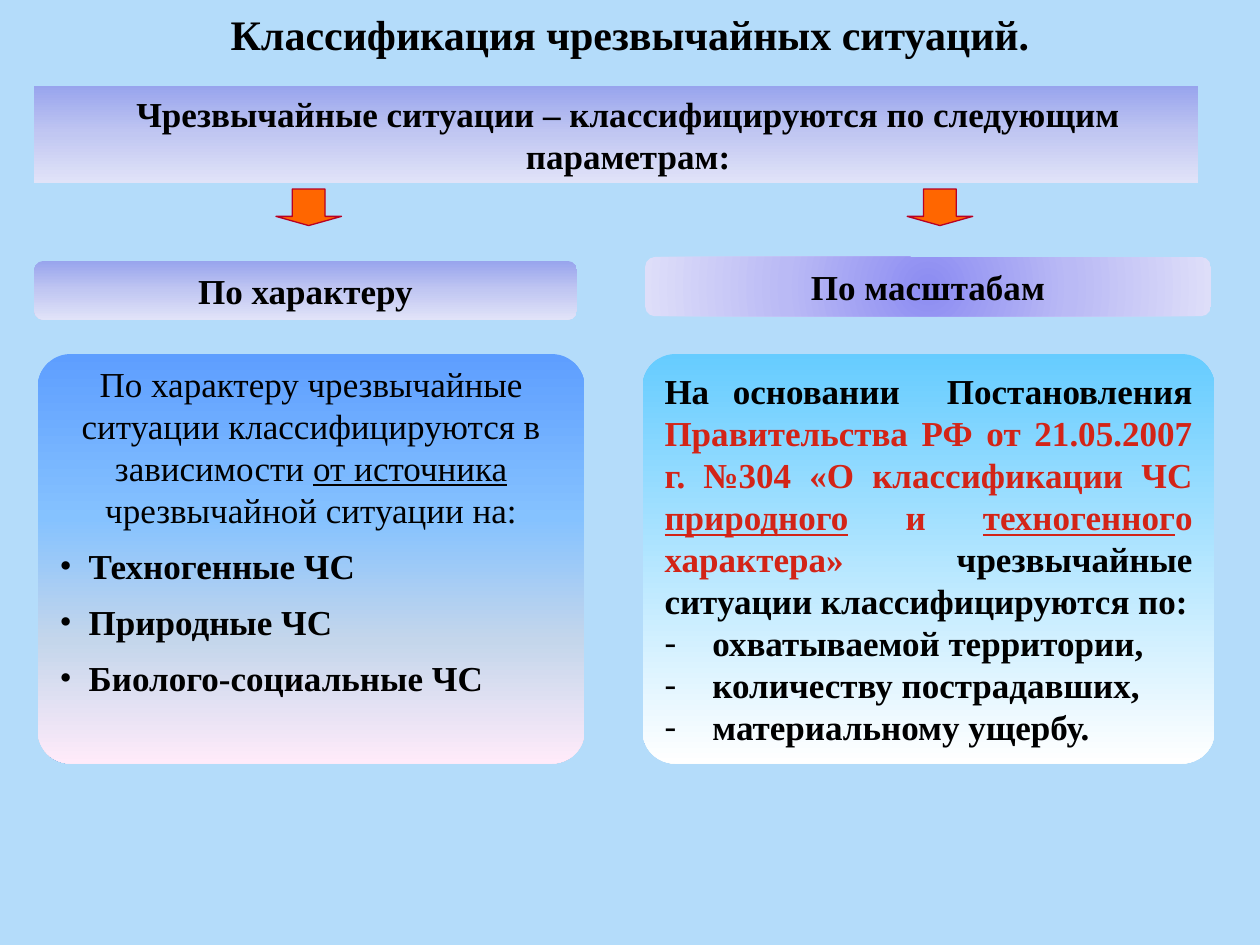
from dataclasses import dataclass

import pptx
import pptx.dml.color
import pptx.enum.shapes
import pptx.enum.text
import pptx.oxml
import pptx.oxml.ns
import pptx.util
from lxml import etree

Inches = pptx.util.Inches
MSO = pptx.enum.shapes.MSO_SHAPE
ALIGN = pptx.enum.text.PP_ALIGN
qn = pptx.oxml.ns.qn


@dataclass(frozen=True)
class Theme:
    """Colours, gradients and type sizes of the slide."""
    font: str = "Times New Roman"
    title: int = 24
    body: int = 20
    gap: int = 8
    text: str = "000000"
    accent: str = "D32417"
    background: str = "B4DCFA"
    arrow: str = "FF6600"
    arrow_line: str = "B80023"
    lavender: tuple = ((0, "98A4ED"), (50, "C1C7F2"), (100, "E1E3F8"))
    violet: tuple = ((0, "8C8CF2"), (50, "BABAF5"), (100, "DEDEF9"))
    sky: tuple = ((0, "66CCFF"), (100, "FFFFFF"))
    dusk: tuple = ((0, "5E9EFF"), (40, "85C2FF"), (70, "C4D6EB"), (100, "FFEBFA"))


T = Theme()


def rgb(value):
    """Return a colour from its hex code."""
    return pptx.dml.color.RGBColor.from_string(value)


def add_run(p, text, size=T.body, color=T.text, bold=True, underline=False):
    """Add a formatted run to a paragraph."""
    r = p.add_run()
    r.text = text
    f = r.font
    f.name, f.size, f.bold = T.font, pptx.util.Pt(size), bold
    f.underline = underline
    f.color.rgb = rgb(color)


def add_paragraph(tf, runs, align, before=0, bullet=None, indent=0):
    """Add a paragraph of (text, format) runs, using the first one if it is free."""
    p = tf.paragraphs[0]
    if p.runs:
        p = tf.add_paragraph()
    p.alignment = align
    p.space_before = pptx.util.Pt(before)
    if bullet:
        pPr = p._p.get_or_add_pPr()
        pPr.set("marL", str(Inches(indent)))
        pPr.set("indent", str(-Inches(indent)))
        etree.SubElement(pPr, qn("a:buFont"), typeface=T.font)
        etree.SubElement(pPr, qn("a:buChar"), char=bullet)
    for text, style in runs:
        add_run(p, text, **style)
    return p


def fill_gradient(sp, stops, radial=False):
    """Fill a shape with a downward or radial gradient."""
    sp.fill.gradient()
    grad = sp._element.spPr.find(qn("a:gradFill"))
    for child in list(grad):
        grad.remove(child)
    gs_list = etree.SubElement(grad, qn("a:gsLst"))
    for pos, color in stops:
        gs = etree.SubElement(gs_list, qn("a:gs"), pos=str(pos * 1000))
        etree.SubElement(gs, qn("a:srgbClr"), val=color)
    if radial:
        shade = etree.SubElement(grad, qn("a:path"), path="circle")
        etree.SubElement(shade, qn("a:fillToRect"), l="50000", t="50000", r="50000", b="50000")
    else:
        etree.SubElement(grad, qn("a:lin"), ang="5400000", scaled="0")


def add_box(s, box, kind, stops, radius=None, radial=False):
    """Add a borderless gradient box and return its text frame."""
    sp = s.shapes.add_shape(kind, *map(Inches, box))
    sp.shadow.inherit = False
    sp.line.fill.background()
    fill_gradient(sp, stops, radial)
    if radius is not None:
        sp.adjustments[0] = radius
    tf = sp.text_frame
    tf.word_wrap = True
    tf.vertical_anchor = pptx.enum.text.MSO_ANCHOR.MIDDLE
    return tf


def add_title(s, box, text):
    """Place the slide title."""
    sp = s.shapes.title
    sp.left, sp.top, sp.width, sp.height = map(Inches, box)
    add_paragraph(sp.text_frame, [(text, {"size": T.title})], ALIGN.CENTER)


def add_banner(s, box, text):
    """Place the banner above both columns."""
    tf = add_box(s, box, MSO.RECTANGLE, T.lavender)
    p = add_paragraph(tf, [(text, {})], ALIGN.CENTER)
    p._p.get_or_add_pPr().set("marL", str(Inches(0.19)))


def add_arrow(s, box):
    """Place an arrow from the banner to a column."""
    sp = s.shapes.add_shape(MSO.DOWN_ARROW, *map(Inches, box))
    sp.shadow.inherit = False
    sp.adjustments[0], sp.adjustments[1] = 0.5, 0.25
    sp.fill.solid()
    sp.fill.fore_color.rgb = rgb(T.arrow)
    sp.line.color.rgb = rgb(T.arrow_line)
    sp.line.width = pptx.util.Pt(0.75)


def add_heading(s, box, text, stops, radial=False):
    """Place a column heading."""
    tf = add_box(s, box, MSO.ROUNDED_RECTANGLE, stops, 0.167, radial)
    add_paragraph(tf, [(text, {})], ALIGN.CENTER)


def add_nature_panel(s, box):
    """Place the panel on classification by nature."""
    tf = add_box(s, box, MSO.ROUNDED_RECTANGLE, T.dusk, 0.08)
    tf.margin_bottom = Inches(0.5)
    plain = {"bold": False}
    intro = [
        ("По характеру чрезвычайные ситуации классифицируются в зависимости ", plain),
        ("от источника ", {"bold": False, "underline": True}),
        ("чрезвычайной ситуации на:", plain),
    ]
    add_paragraph(tf, intro, ALIGN.CENTER, T.gap)
    for item in ("Техногенные ЧС", "Природные ЧС", "Биолого-социальные ЧС"):
        add_paragraph(tf, [(item, {})], ALIGN.LEFT, T.gap, "•", 0.23)


def add_scale_panel(s, box):
    """Place the panel on classification by scale."""
    tf = add_box(s, box, MSO.ROUNDED_RECTANGLE, T.sky, 0.08)
    red = {"color": T.accent}
    marked = {"color": T.accent, "underline": True}
    intro = [
        ("На основании  Постановления ", {}),
        ("Правительства РФ от 21.05.2007 г. №304 «О классификации ЧС ", red),
        ("природного", marked),
        (" и ", red),
        ("техногенног", marked),
        ("о характера»", red),
        (" чрезвычайные ситуации классифицируются по:", {}),
    ]
    add_paragraph(tf, intro, ALIGN.JUSTIFY)
    for item in ("охватываемой территории,", "количеству пострадавших,", "материальному ущербу."):
        add_paragraph(tf, [(item, {})], ALIGN.JUSTIFY, 0, "-", 0.38)


def main():
    """Build the slide and save it."""
    prs = pptx.Presentation()
    prs.slide_width, prs.slide_height = Inches(10), Inches(7.5)
    s = prs.slides.add_slide(prs.slide_layouts[5])
    s.background.fill.solid()
    s.background.fill.fore_color.rgb = rgb(T.background)
    add_title(s, (0, 0, 10, 0.54), "Классификация чрезвычайных ситуаций.")
    add_banner(s, (0.27, 0.68, 9.24, 0.77),
               "Чрезвычайные ситуации – классифицируются по следующим параметрам:")
    for x in (2.19, 7.2):
        add_arrow(s, (x, 1.5, 0.52, 0.29))
    add_heading(s, (0.27, 2.07, 4.31, 0.47), "По характеру", T.lavender)
    add_heading(s, (5.12, 2.04, 4.49, 0.47), "По масштабам", T.violet, radial=True)
    add_nature_panel(s, (0.3, 2.81, 4.34, 3.25))
    add_scale_panel(s, (5.1, 2.81, 4.54, 3.25))
    prs.save("out.pptx")


if __name__ == "__main__":
    main()
